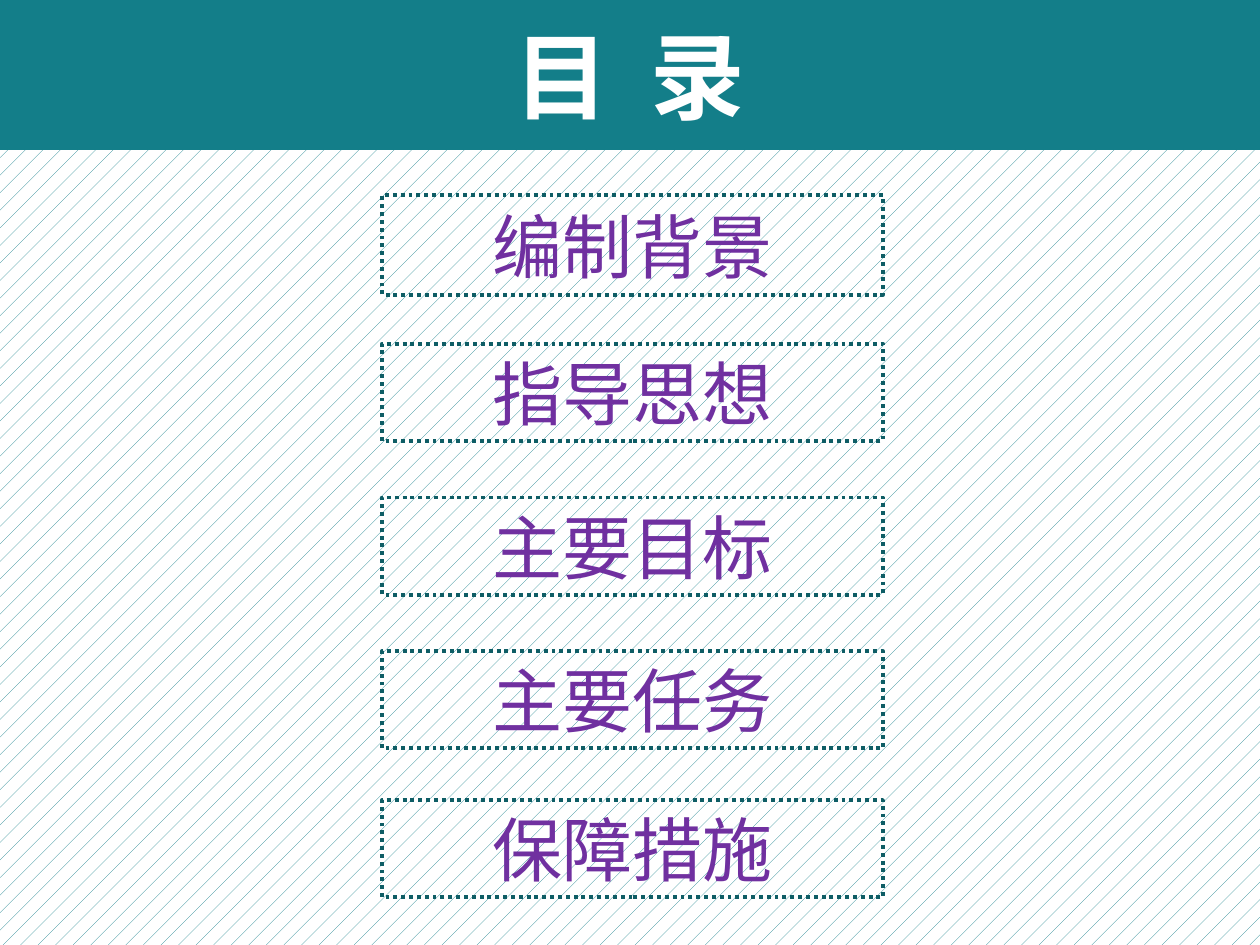
from dataclasses import dataclass

from lxml import etree
from pptx import Presentation
from pptx.dml.color import RGBColor
from pptx.enum import dml, shapes, text
from pptx.oxml import ns
from pptx.util import Cm, Pt


@dataclass(frozen=True)
class Theme:
    teal: str = "137E89"
    dark_teal: str = "0E5D65"
    purple: str = "7030A0"
    white: str = "FFFFFF"
    font: str = "Noto Sans CJK SC"
    title_size: int = 54
    entry_size: int = 40
    border: float = 2.25


THEME = Theme()
ENTRY_LEFT, ENTRY_WIDTH = 7.7, 10.1
ENTRIES = [
    ("编制背景", 3.94, 2.0),
    ("指导思想", 6.93, 1.96),
    ("主要目标", 10.03, 1.96),
    ("主要任务", 13.13, 1.96),
    ("保障措施", 16.13, 1.96),
]


def color(value):
    return RGBColor.from_string(value)


def place(part, left, top, width, height):
    part.left, part.top = Cm(left), Cm(top)
    part.width, part.height = Cm(width), Cm(height)


def write(part, words, *, size, ink, bold=False, spacing=0):
    frame = part.text_frame
    frame.word_wrap = True
    frame.auto_size = text.MSO_AUTO_SIZE.NONE
    frame.vertical_anchor = text.MSO_ANCHOR.MIDDLE
    frame.margin_top = frame.margin_bottom = 0
    paragraph = frame.paragraphs[0]
    paragraph.alignment = text.PP_ALIGN.CENTER
    run = paragraph.add_run()
    run.text = words
    run.font.size, run.font.bold = Pt(size), bold
    run.font.name = THEME.font
    run.font.color.rgb = color(ink)
    properties = run.font._element
    etree.SubElement(properties, ns.qn("a:ea"), typeface=THEME.font)
    if spacing:
        properties.set("spc", str(spacing * 100))
    return paragraph


def remove_bullet(paragraph):
    properties = paragraph._p.get_or_add_pPr()
    properties.set("marL", "0")
    properties.set("indent", "0")
    etree.SubElement(properties, ns.qn("a:buNone"))


def paint_background(slide):
    fill = slide.background.fill
    fill.patterned()
    fill.pattern = dml.MSO_PATTERN.PERCENT_5
    fill.fore_color.rgb = color(THEME.teal)
    fill.back_color.rgb = color(THEME.white)


def add_banner(slide, words):
    banner = slide.shapes.title
    place(banner, -0.03, 0, 25.45, 3.02)
    banner.fill.solid()
    banner.fill.fore_color.rgb = color(THEME.teal)
    write(banner, words, size=THEME.title_size, ink=THEME.white, bold=True, spacing=6)


def format_entry(entry, words, top, height):
    place(entry, ENTRY_LEFT, top, ENTRY_WIDTH, height)
    entry.fill.background()
    entry.line.color.rgb = color(THEME.dark_teal)
    entry.line.width = Pt(THEME.border)
    entry.line.dash_style = dml.MSO_LINE.ROUND_DOT
    return write(entry, words, size=THEME.entry_size, ink=THEME.purple)


def add_entries(slide):
    first, *others = ENTRIES
    remove_bullet(format_entry(slide.placeholders[1], *first))
    for details in others:
        entry = slide.shapes.add_shape(shapes.MSO_SHAPE.RECTANGLE, 0, 0, 0, 0)
        entry.shadow.inherit = False
        format_entry(entry, *details)


def main():
    deck = Presentation()
    deck.slide_width, deck.slide_height = Cm(25.4), Cm(19.05)
    slide = deck.slides.add_slide(deck.slide_layouts[1])
    paint_background(slide)
    add_banner(slide, "目 录")
    add_entries(slide)
    deck.save("out.pptx")


if __name__ == "__main__":
    main()
